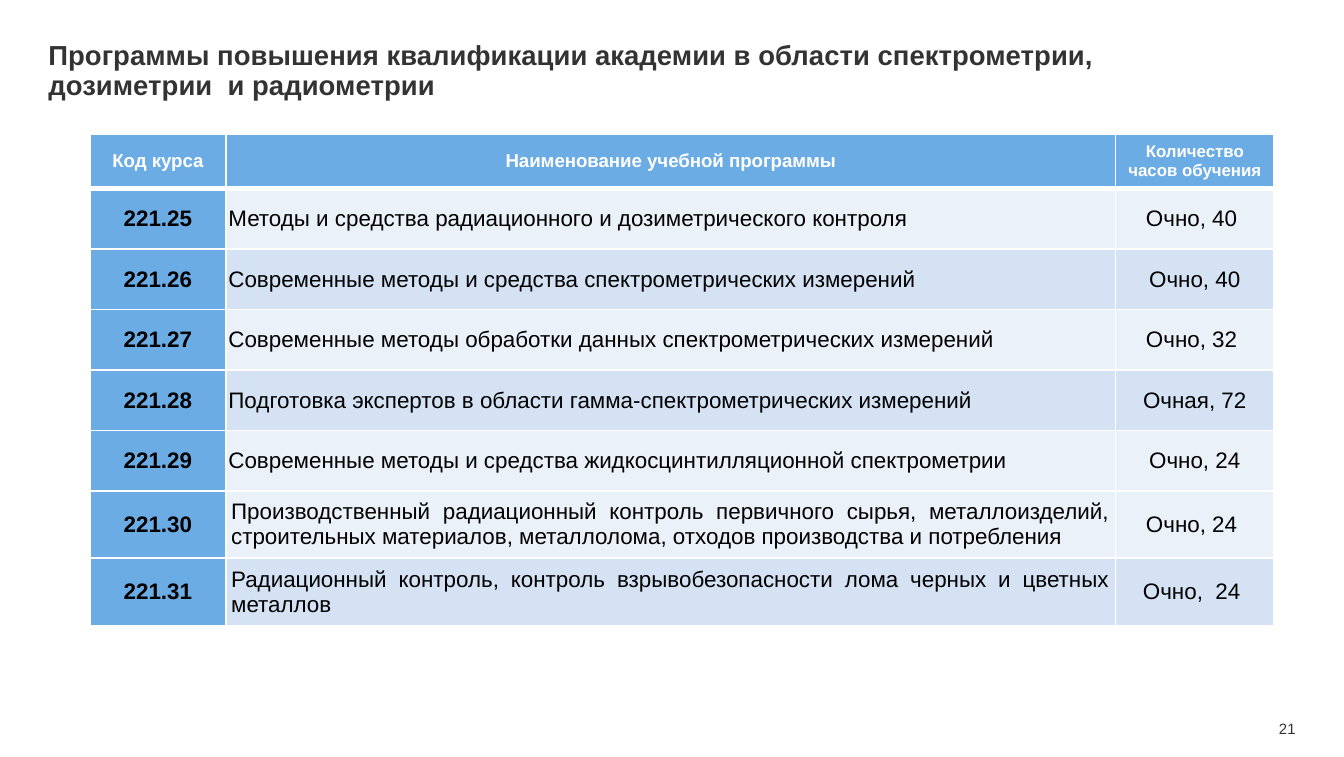
from lxml import etree
from pptx import Presentation
from pptx.dml.color import RGBColor
from pptx.enum.text import MSO_ANCHOR as Anchor, MSO_AUTO_SIZE as AutoSize, PP_ALIGN as Align
from pptx.oxml.ns import qn
from pptx.util import Inches, Pt

WHITE = RGBColor(0xFF, 0xFF, 0xFF)
BLACK = RGBColor(0, 0, 0)
GRAY = RGBColor(0x33, 0x33, 0x33)
BLUE = RGBColor(0x6C, 0xAC, 0xE4)
LIGHT = RGBColor(0xEA, 0xF1, 0xF9)
MEDIUM = RGBColor(0xD4, 0xE2, 0xF4)

HEADER = ("Код курса", "Наименование учебной программы", "Количество часов обучения")
COURSES = [
    ("221.25", "Методы и средства радиационного и дозиметрического контроля", "Очно, 40 ", LIGHT),
    ("221.26", "Современные методы и средства спектрометрических измерений", "Очно, 40", MEDIUM),
    ("221.27", "Современные методы обработки данных спектрометрических измерений", "Очно, 32 ", LIGHT),
    ("221.28", "Подготовка экспертов в области гамма-спектрометрических измерений", "Очная, 72", MEDIUM),
    ("221.29", "Современные методы и средства жидкосцинтилляционной спектрометрии", "Очно, 24", LIGHT),
    ("221.30", "Производственный радиационный контроль первичного сырья, металлоизделий, "
     "строительных материалов, металлолома, отходов производства и потребления", "Очно, 24 ", LIGHT),
    ("221.31", "Радиационный контроль, контроль взрывобезопасности лома черных и цветных металлов",
     "Очно,  24 ", MEDIUM),
]
COL_WIDTHS = (1.01, 6.62, 1.18)
HEADER_HEIGHT, ROW_HEIGHT = 0.35, 0.45


def style(p, size, color, bold=False, align=Align.LEFT):
    p.alignment = align
    p.font.name = "Arial"
    p.font.size = Pt(size)
    p.font.bold = bold
    p.font.color.rgb = color


def fill_cell(cell, text, fill, margin, borders):
    cell.text = text
    cell.vertical_anchor = Anchor.MIDDLE
    cell.margin_left = cell.margin_right = Inches(margin)
    cell.margin_top = cell.margin_bottom = Inches(0.05)
    tc_pr = cell._tc.get_or_add_tcPr()
    for side, width in zip("LRTB", borders):
        ln = etree.SubElement(tc_pr, qn(f"a:ln{side}"), w=str(Pt(width)))
        solid = etree.SubElement(ln, qn("a:solidFill"))
        etree.SubElement(solid, qn("a:srgbClr"), val=str(WHITE))
    cell.fill.solid()
    cell.fill.fore_color.rgb = fill
    return cell.text_frame.paragraphs[0]


prs = Presentation()
prs.slide_width, prs.slide_height = Inches(10), Inches(5.63)
s = prs.slides.add_slide(prs.slide_layouts[5])

# Title
title = s.shapes.title
title.left, title.top, title.width, title.height = map(Inches, (0.36, 0.31, 8.09, 0.22))
title.text = "Программы повышения квалификации академии в области спектрометрии, дозиметрии  и радиометрии"
tf = title.text_frame
tf.auto_size = AutoSize.NONE
tf.vertical_anchor = Anchor.TOP
tf.paragraphs[0].line_spacing = 0.9
style(tf.paragraphs[0], 14.7, GRAY, bold=True)

# Page number
number = s.shapes.add_textbox(*map(Inches, (8.93, 5.35, 0.71, 0.13)))
number.text_frame.text = "21"
number.text_frame.word_wrap = True
number.text_frame.vertical_anchor = Anchor.MIDDLE
style(number.text_frame.paragraphs[0], 8, GRAY, align=Align.RIGHT)

for frame in (tf, number.text_frame):
    frame.margin_left = frame.margin_top = frame.margin_right = frame.margin_bottom = 0

# Course table
table_height = HEADER_HEIGHT + ROW_HEIGHT * len(COURSES)
table = s.shapes.add_table(len(COURSES) + 1, len(HEADER), Inches(0.67), Inches(1),
                           Inches(sum(COL_WIDTHS)), Inches(table_height)).table
for column, width in zip(table.columns, COL_WIDTHS):
    column.width = Inches(width)
for i, row in enumerate(table.rows):
    row.height = Inches(ROW_HEIGHT if i else HEADER_HEIGHT)

# Header row, with a thicker line below
for c, text in enumerate(HEADER):
    p = fill_cell(table.cell(0, c), text, BLUE, 0.06, (0.96, 0.96, 0.96, 3))
    style(p, 9 if c == 2 else 10, WHITE, bold=True, align=Align.CENTER)

# Course rows
for r, (*texts, band) in enumerate(COURSES, start=1):
    margin = 0.04 if r > 5 else 0.02
    borders = (0.96, 0.96, 3 if r == 1 else 0.96, 0.96)
    for c, text in enumerate(texts):
        p = fill_cell(table.cell(r, c), text, band if c else BLUE, margin, borders)
        style(p, 12, BLACK, bold=c == 0, align=Align.JUSTIFY if c == 1 else Align.CENTER)

prs.save("out.pptx")
